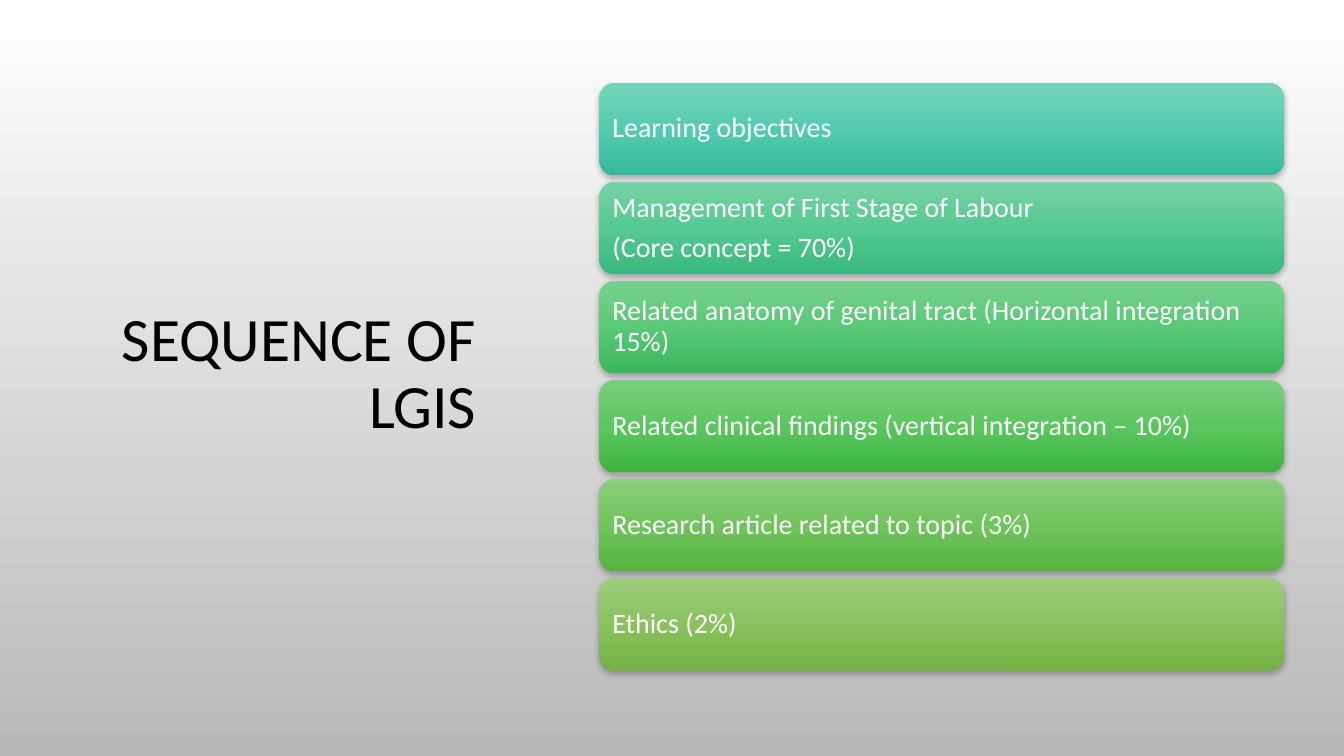
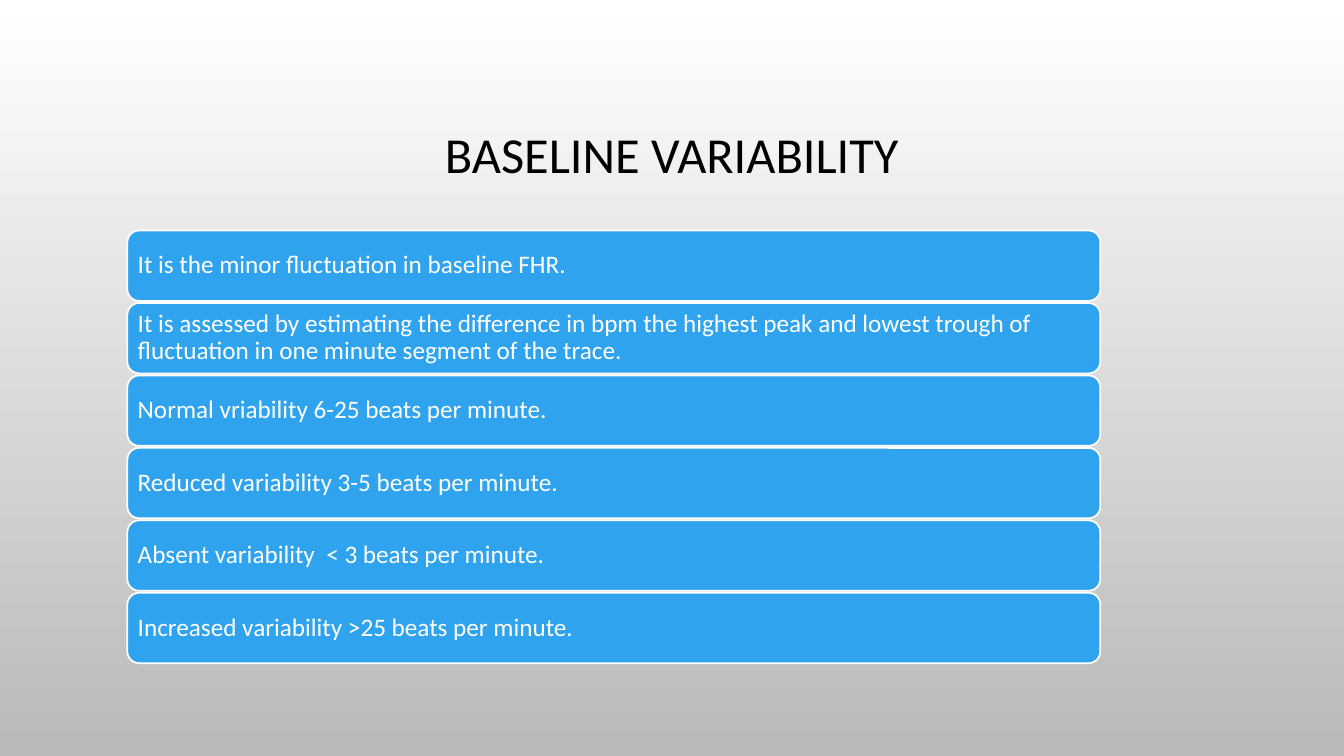
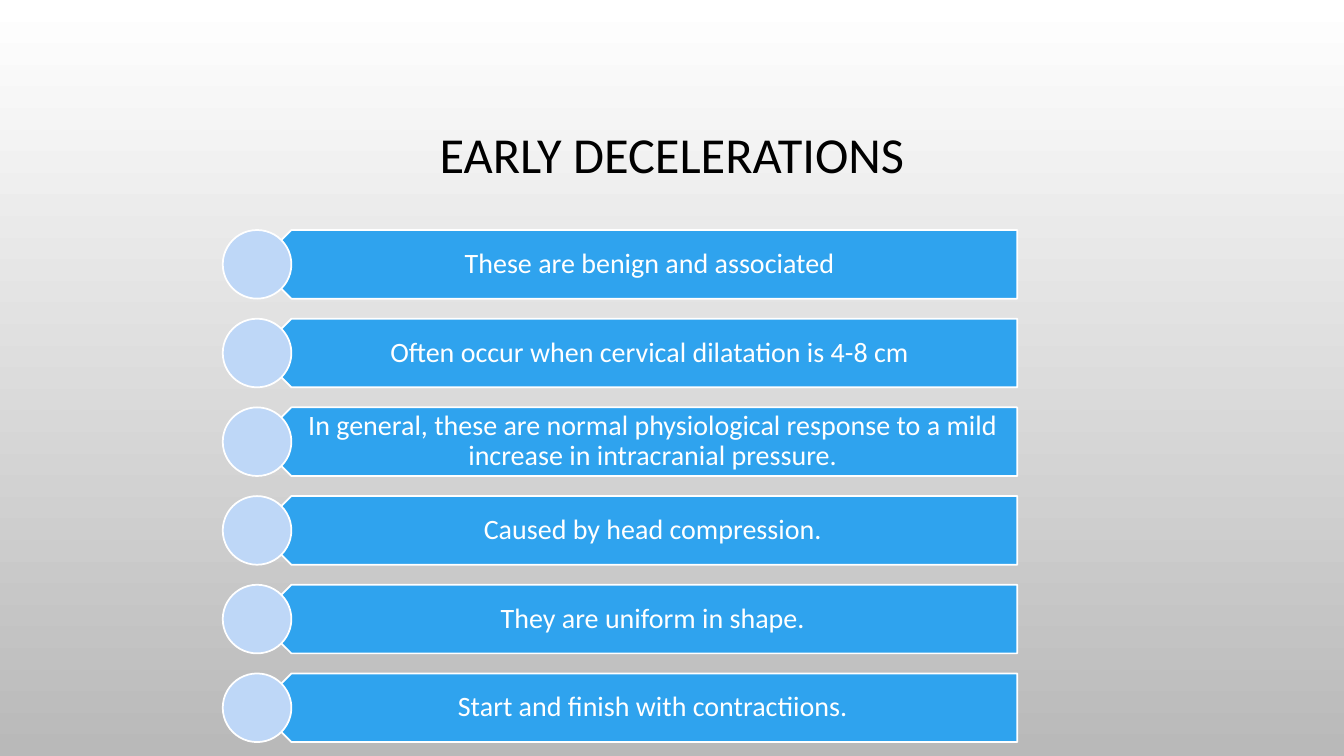
from copy import deepcopy

from lxml import etree
from pptx import Presentation
from pptx.dml.color import RGBColor
from pptx.enum.shapes import MSO_SHAPE as SHAPE
from pptx.enum.text import MSO_ANCHOR as ANCHOR, MSO_AUTO_SIZE as AUTO_SIZE, PP_ALIGN as ALIGN
from pptx.oxml.ns import qn
from pptx.util import Pt

FONT = "Calibri"
BLACK = RGBColor(0x00, 0x00, 0x00)
WHITE = RGBColor(0xFF, 0xFF, 0xFF)
GREY = RGBColor(0xB9, 0xB9, 0xB9)
BLUE = RGBColor(0x2F, 0xA3, 0xEE)
PALE_BLUE = RGBColor(0xBE, 0xD7, 0xF7)
TEAL = (RGBColor(0x77, 0xD4, 0xBC), RGBColor(0x54, 0xCB, 0xAF), RGBColor(0x36, 0xBA, 0x9C))
JADE = (RGBColor(0x78, 0xD2, 0xA5), RGBColor(0x56, 0xC9, 0x92), RGBColor(0x38, 0xB8, 0x7C))
EMERALD = (RGBColor(0x79, 0xD1, 0x90), RGBColor(0x59, 0xC8, 0x77), RGBColor(0x3B, 0xB6, 0x5E))
GREEN = (RGBColor(0x7B, 0xCF, 0x7E), RGBColor(0x5B, 0xC6, 0x5F), RGBColor(0x3D, 0xB4, 0x42))
LEAF = (RGBColor(0x8B, 0xCE, 0x7C), RGBColor(0x70, 0xC4, 0x5D), RGBColor(0x57, 0xB2, 0x40))
OLIVE = (RGBColor(0x9E, 0xCC, 0x7E), RGBColor(0x8A, 0xC2, 0x5F), RGBColor(0x73, 0xB1, 0x42))

prs = Presentation()
prs.slide_width, prs.slide_height = Pt(960), Pt(540)
backdrop = prs.slide_master.background.fill
backdrop.gradient()
backdrop.gradient_angle = 270
for stop, color, position in zip(backdrop.gradient_stops, (WHITE, GREY), (0, 1)):
    stop.color.rgb = color
    stop.position = position


def write(shape, text, size, color, align, insets):
    frame = shape.text_frame
    frame.text = text
    frame.word_wrap = True
    frame.auto_size = AUTO_SIZE.NONE
    frame.vertical_anchor = ANCHOR.MIDDLE
    frame.margin_left, frame.margin_top, frame.margin_right, frame.margin_bottom = map(Pt, insets)
    for paragraph in frame.paragraphs:
        paragraph.alignment = align
        paragraph.line_spacing = 0.9
        paragraph.space_after = Pt(size * 0.35)
        paragraph.font.name = FONT
        paragraph.font.size = Pt(size)
        paragraph.font.color.rgb = color


def add_titled_slide(title, box, size, align):
    slide = prs.slides.add_slide(prs.slide_layouts[5])
    heading = slide.shapes.title
    heading.left, heading.top, heading.width, heading.height = map(Pt, box)
    write(heading, title, size, BLACK, align, (7.2, 3.6, 7.2, 3.6))
    return slide


TOP_TITLE = (72, 49, 816, 126)

sequence = add_titled_slide("SEQUENCE OF LGIS", (53, 163, 294.5, 209.5), 44, ALIGN.RIGHT)
sessions = [
    ("Learning objectives", TEAL),
    ("Management of First Stage of Labour\n(Core concept = 70%)", JADE),
    ("Related anatomy of genital tract (Horizontal integration 15%)", EMERALD),
    ("Related clinical findings (vertical integration – 10%)", GREEN),
    ("Research article related to topic (3%)", LEAF),
    ("Ethics (2%)", OLIVE),
]
for row, (session, shades) in enumerate(sessions):
    bar = sequence.shapes.add_shape(
        SHAPE.ROUNDED_RECTANGLE, Pt(428.2), Pt(59 + row * 70.75), Pt(489), Pt(66.2))
    bar.line.fill.background()
    bar.fill.gradient()
    bar.fill.gradient_angle = 270
    stops = bar._element.spPr.find(".//" + qn("a:gsLst"))
    stops.insert(1, deepcopy(stops[0]))
    for stop, shade, position in zip(bar.fill.gradient_stops, shades, (0, 0.5, 1)):
        stop.color.rgb = shade
        stop.position = position
    bar.shadow.inherit = False
    effects = bar._element.spPr.find(qn("a:effectLst"))
    shadow = etree.SubElement(effects, qn("a:outerShdw"), blurRad=str(Pt(4)),
                              dist=str(Pt(2)), dir="5400000", rotWithShape="0")
    tint = etree.SubElement(shadow, qn("a:srgbClr"), val=str(BLACK))
    etree.SubElement(tint, qn("a:alpha"), val="28000")
    write(bar, session, 20, WHITE, ALIGN.LEFT, (6, 6, 6, 6))

variability = add_titled_slide("BASELINE VARIABILITY", TOP_TITLE, 36, ALIGN.CENTER)
variability_facts = [
    "It is the minor fluctuation in baseline FHR.",
    "It is assessed by estimating the difference in bpm the highest peak and lowest trough of fluctuation in one minute segment of the trace.",
    "Normal vriability 6-25 beats per minute.",
    "Reduced variability 3-5 beats per minute.",
    "Absent variability  < 3 beats per minute.",
    "Increased variability >25 beats per minute.",
]
for row, fact in enumerate(variability_facts):
    bar = variability.shapes.add_shape(
        SHAPE.ROUNDED_RECTANGLE, Pt(91), Pt(164.7 + row * 51.75), Pt(695), Pt(50.3))
    bar.shadow.inherit = False
    bar.fill.solid()
    bar.fill.fore_color.rgb = BLUE
    bar.line.color.rgb = WHITE
    bar.line.width = Pt(1.25)
    write(bar, fact, 18, WHITE, ALIGN.LEFT, (5, 5, 5, 5))

decelerations = add_titled_slide("EARLY DECELERATIONS", TOP_TITLE, 36, ALIGN.CENTER)
deceleration_facts = [
    "These are benign and associated ",
    "Often occur when cervical dilatation is 4-8 cm ",
    "In general, these are normal physiological response to a mild increase in intracranial pressure.",
    "Caused by head compression.",
    "They are uniform in shape.",
    "Start and finish with contractiions.",
]
for row, fact in enumerate(deceleration_facts):
    top = Pt(164.3 + row * 63.35)
    banner = decelerations.shapes.add_shape(SHAPE.PENTAGON, Pt(183.6), top, Pt(543), Pt(49))
    banner.rotation = 180
    label = decelerations.shapes.add_textbox(Pt(195.8), top, Pt(530.8), Pt(49))
    write(label, fact, 20, WHITE, ALIGN.CENTER, (21.6, 6, 11.5, 6))
    marker = decelerations.shapes.add_shape(SHAPE.OVAL, Pt(159.1), top, Pt(49), Pt(49))
    for part, color in ((banner, BLUE), (marker, PALE_BLUE)):
        part.shadow.inherit = False
        part.fill.solid()
        part.fill.fore_color.rgb = color
        part.line.color.rgb = WHITE
        part.line.width = Pt(1.25)

prs.save("out.pptx")
